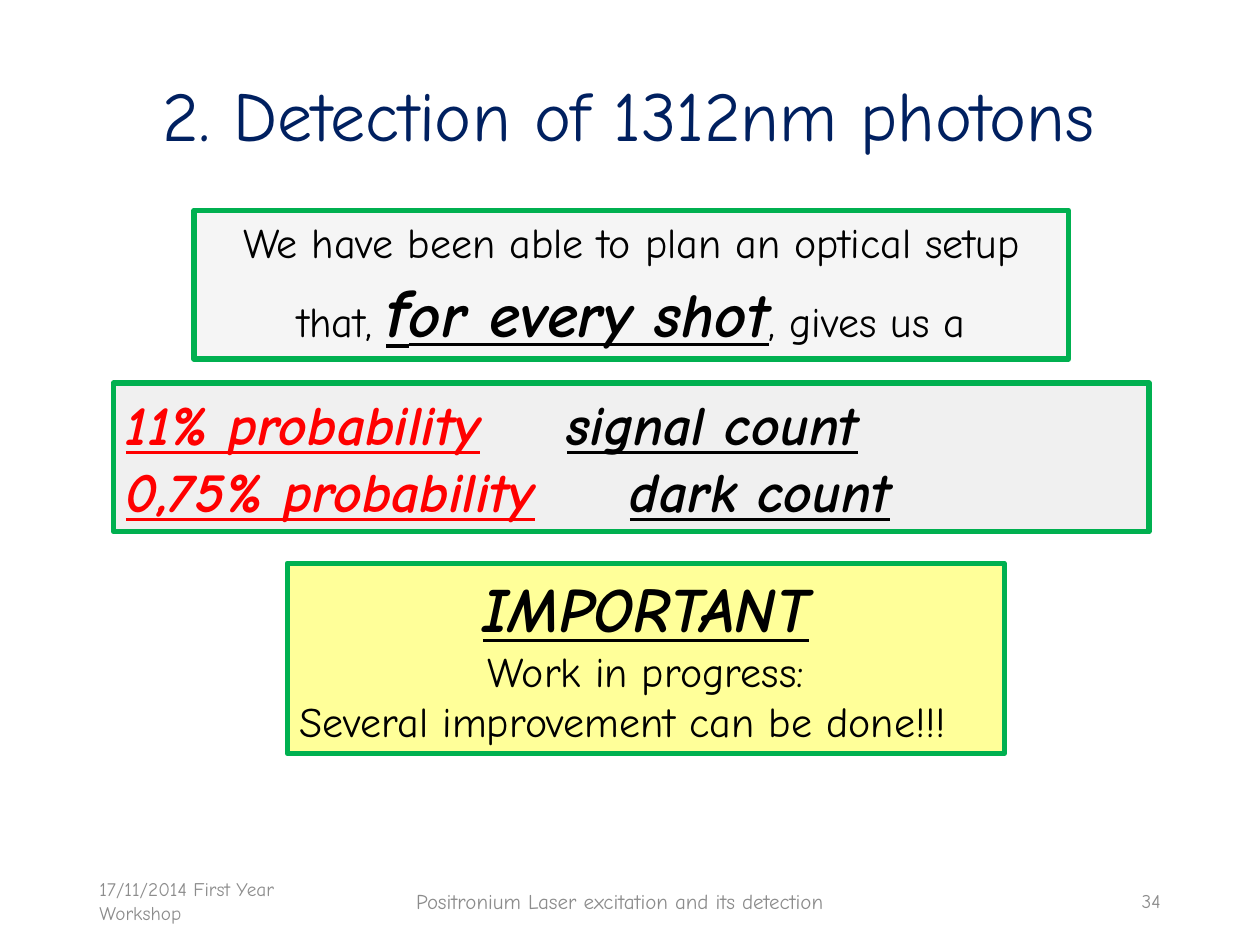
from lxml import etree
from pptx import Presentation
from pptx import util as u
from pptx.dml.color import RGBColor
from pptx.enum import shapes, text
from pptx.oxml.ns import qn

CENTER, LEFT, RIGHT = text.PP_ALIGN.CENTER, text.PP_ALIGN.LEFT, text.PP_ALIGN.RIGHT
MIDDLE = text.MSO_ANCHOR.MIDDLE
BLACK, RED, NAVY, GRAY = "000000", "FF0000", "002060", "8C8C8C"


def rgb(value):
    return RGBColor.from_string(value)


class SlideBuilder:
    font = "Comic Neue"
    border = "00B050"

    def __init__(self, prs):
        self.slide = prs.slides.add_slide(prs.slide_layouts[5])

    def run(self, p, content, size, color=BLACK, strong=False):
        """Add a run; a strong one is bold, italic and underlined."""
        r = p.add_run()
        r.text = content
        r.font.name = self.font
        r.font.size = u.Pt(size)
        r.font.color.rgb = rgb(color)
        r.font.bold = r.font.italic = r.font.underline = strong

    def fill_text(self, tf, paragraphs):
        """Write (alignment, runs) pairs into a text frame."""
        tf.word_wrap = True
        for i, (align, runs) in enumerate(paragraphs):
            p = tf.paragraphs[0] if i == 0 else tf.add_paragraph()
            p.alignment = align
            for args in runs:
                self.run(p, *args)

    def title(self, box, content):
        sp = self.slide.shapes.title
        sp.left, sp.top, sp.width, sp.height = map(u.Inches, box)
        tf = sp.text_frame
        tf.vertical_anchor = MIDDLE
        self.fill_text(tf, [(CENTER, [(content, 40, NAVY)])])
        tf.paragraphs[0].line_spacing = 0.9

    def footer(self, left, width, content, size, align):
        sp = self.slide.shapes.add_textbox(
            u.Inches(left), u.Inches(6.95), u.Inches(width), u.Inches(0.4))
        sp.text_frame.vertical_anchor = MIDDLE
        self.fill_text(sp.text_frame, [(align, [(content, size, GRAY)])])

    def panel(self, box, color, opacity, paragraphs):
        sp = self.slide.shapes.add_shape(
            shapes.MSO_SHAPE.RECTANGLE, *map(u.Inches, box))
        sp.shadow.inherit = False
        sp.fill.solid()
        sp.fill.fore_color.rgb = rgb(color)
        # Opacity in percent
        clr = sp.fill._xPr.find(qn("a:solidFill"))[0]
        etree.SubElement(clr, qn("a:alpha")).set("val", str(opacity * 1000))
        sp.line.color.rgb = rgb(self.border)
        sp.line.width = u.Pt(3)
        tf = sp.text_frame
        tf.vertical_anchor = text.MSO_ANCHOR.TOP
        tf.auto_size = text.MSO_AUTO_SIZE.SHAPE_TO_FIT_TEXT
        self.fill_text(tf, paragraphs)


def main():
    prs = Presentation()
    prs.slide_width, prs.slide_height = u.Inches(10), u.Inches(7.5)
    s = SlideBuilder(prs)

    s.title((0.68, 0.22, 8.62, 1.45), "2. Detection of 1312nm photons")

    # Footer row
    s.footer(0.69, 2.25, "17/11/2014 First Year Workshop", 11, LEFT)
    s.footer(7.06, 2.25, "34", 11, RIGHT)
    s.footer(2.71, 4.42, "Positronium Laser excitation and its detection", 12, CENTER)

    # Introduction
    s.panel((1.54, 1.67, 6.94, 1.18), "E7E6E6", 40, [
        (CENTER, [("We have been able to plan an optical setup that, ", 24),
                  ("f", 40, BLACK, True),
                  ("or every shot", 36, BLACK, True),
                  (", gives us a", 24)]),
    ])

    # Probabilities
    results = [("11% probability", "signal count"),
               ("0,75% probability", "dark count")]
    s.panel((0.9, 3.04, 8.22, 1.18), "E7E6E6", 60, [
        (LEFT, [(chance, 32, RED, True), (" \t\t", 32), (count, 32, BLACK, True)])
        for chance, count in results
    ])

    # Outlook
    s.panel((2.28, 4.47, 5.69, 1.51), "FFFF00", 40, [
        (CENTER, [("IMPORTANT", 36, BLACK, True)]),
        (CENTER, [("Work in progress:", 24)]),
        (LEFT, [("Several improvement can be done!!!", 24)]),
    ])

    prs.save("out.pptx")


if __name__ == "__main__":
    main()
